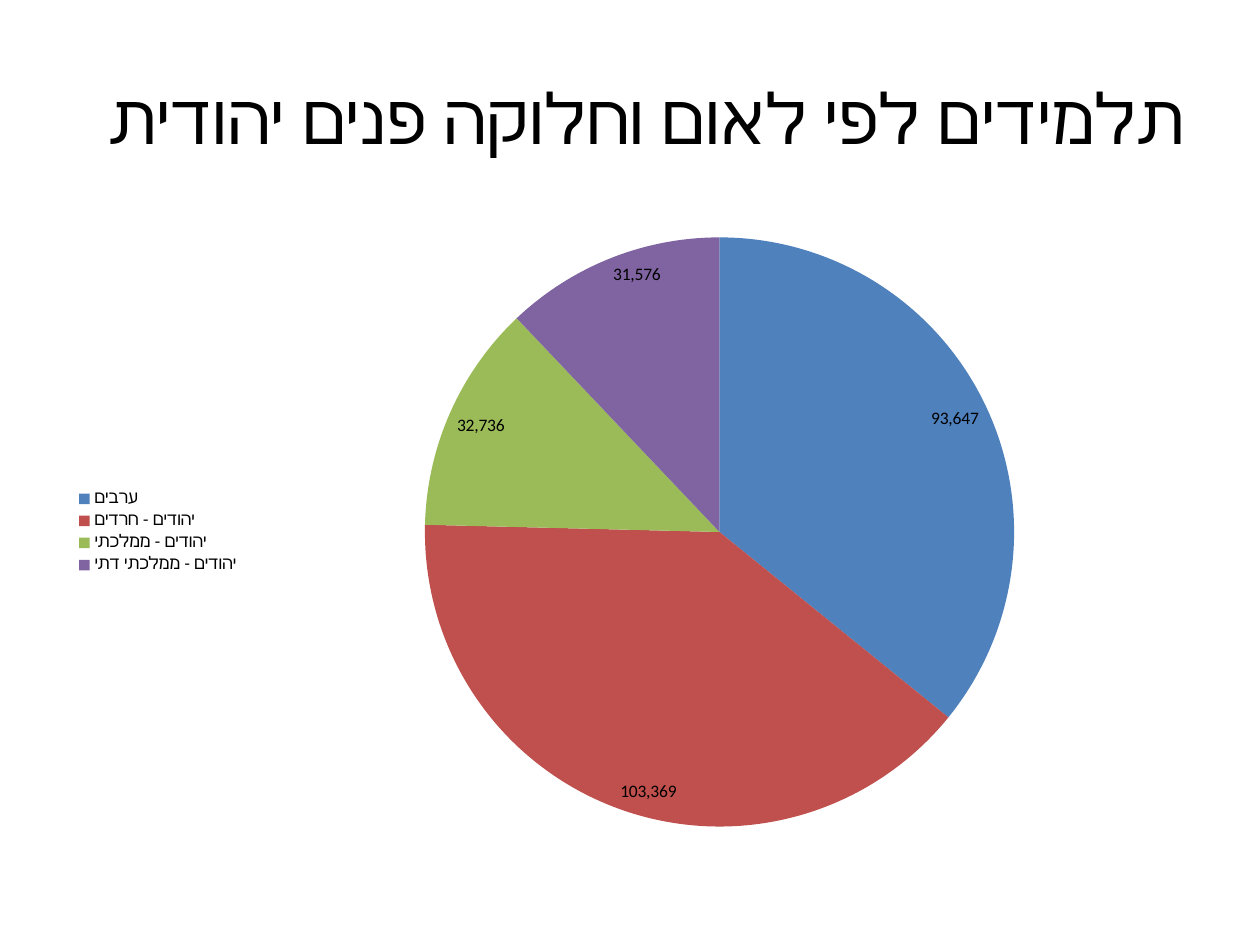
from pptx import Presentation
from pptx.chart.data import CategoryChartData
from pptx.dml.color import RGBColor
from pptx.enum.chart import XL_CHART_TYPE, XL_LABEL_POSITION, XL_LEGEND_POSITION
from pptx.enum.text import MSO_ANCHOR, PP_ALIGN
from pptx.util import Emu, Pt

PIE = XL_CHART_TYPE.PIE
LEFT = XL_LEGEND_POSITION.LEFT
INSIDE_END = XL_LABEL_POSITION.INSIDE_END
MIDDLE = MSO_ANCHOR.MIDDLE
RIGHT = PP_ALIGN.RIGHT

PX_PER_INCH = 126
COLORS = {
    "text": "000000",
    "arab": "4F81BD",
    "haredi": "C0504D",
    "state": "9BBB59",
    "state_religious": "8064A2",
}
PUPILS = [
    ("ערבים", 93647, "arab"),
    ("יהודים - חרדים", 103369, "haredi"),
    ("יהודים - ממלכתי", 32736, "state"),
    ("יהודים - ממלכתי דתי", 31576, "state_religious"),
]


def px(*lengths):
    """Turn px lengths into EMU."""
    return [Emu(round(n * 914400 / PX_PER_INCH)) for n in lengths]


def rgb(name):
    return RGBColor.from_string(COLORS[name])


class SlideBuilder:
    font_name = "Calibri"

    def __init__(self, slide):
        self.slide = slide

    def style_font(self, font, size):
        for key, value in {"name": self.font_name, "size": Pt(size)}.items():
            setattr(font, key, value)
        font.color.rgb = rgb("text")

    def title(self, text, box, size):
        """Add a right-to-left heading."""
        tf = self.slide.shapes.add_textbox(*px(*box)).text_frame
        for key, value in {"word_wrap": True, "vertical_anchor": MIDDLE}.items():
            setattr(tf, key, value)
        p = tf.paragraphs[0]
        p.alignment = RIGHT
        p._p.get_or_add_pPr().set("rtl", "1")
        r = p.add_run()
        r.text = text
        self.style_font(r.font, size)

    def pie(self, rows, box, size):
        data = CategoryChartData(number_format="#,##0")
        data.categories = [label for label, _, _ in rows]
        data.add_series("Series 1", [value for _, value, _ in rows])
        chart = self.slide.shapes.add_chart(PIE, *px(*box), data).chart
        self.style_font(chart.font, size)
        chart.has_title = False
        chart.has_legend = True
        for key, value in {"position": LEFT, "include_in_layout": False}.items():
            setattr(chart.legend, key, value)

        plot = chart.plots[0]
        plot.vary_by_categories = True
        plot.has_data_labels = True
        labels = {
            "show_value": True,
            "show_percentage": False,
            "number_format": "#,##0",
            "number_format_is_linked": False,
            "position": INSIDE_END,
        }
        for key, value in labels.items():
            setattr(plot.data_labels, key, value)
        self.style_font(plot.data_labels.font, size)

        for i, (_, _, color) in enumerate(rows):
            fill = plot.series[0].points[i].format.fill
            fill.solid()
            fill.fore_color.rgb = rgb(color)


def main():
    prs = Presentation()
    prs.slide_width, prs.slide_height = px(1260, 945)
    s = SlideBuilder(prs.slides.add_slide(prs.slide_layouts[6]))
    s.title("תלמידים לפי לאום וחלוקה פנים יהודית", (63, 38, 1134, 158), 40)
    s.pie(PUPILS, (63, 220, 1134, 624), 10)
    prs.save("out.pptx")


if __name__ == "__main__":
    main()
